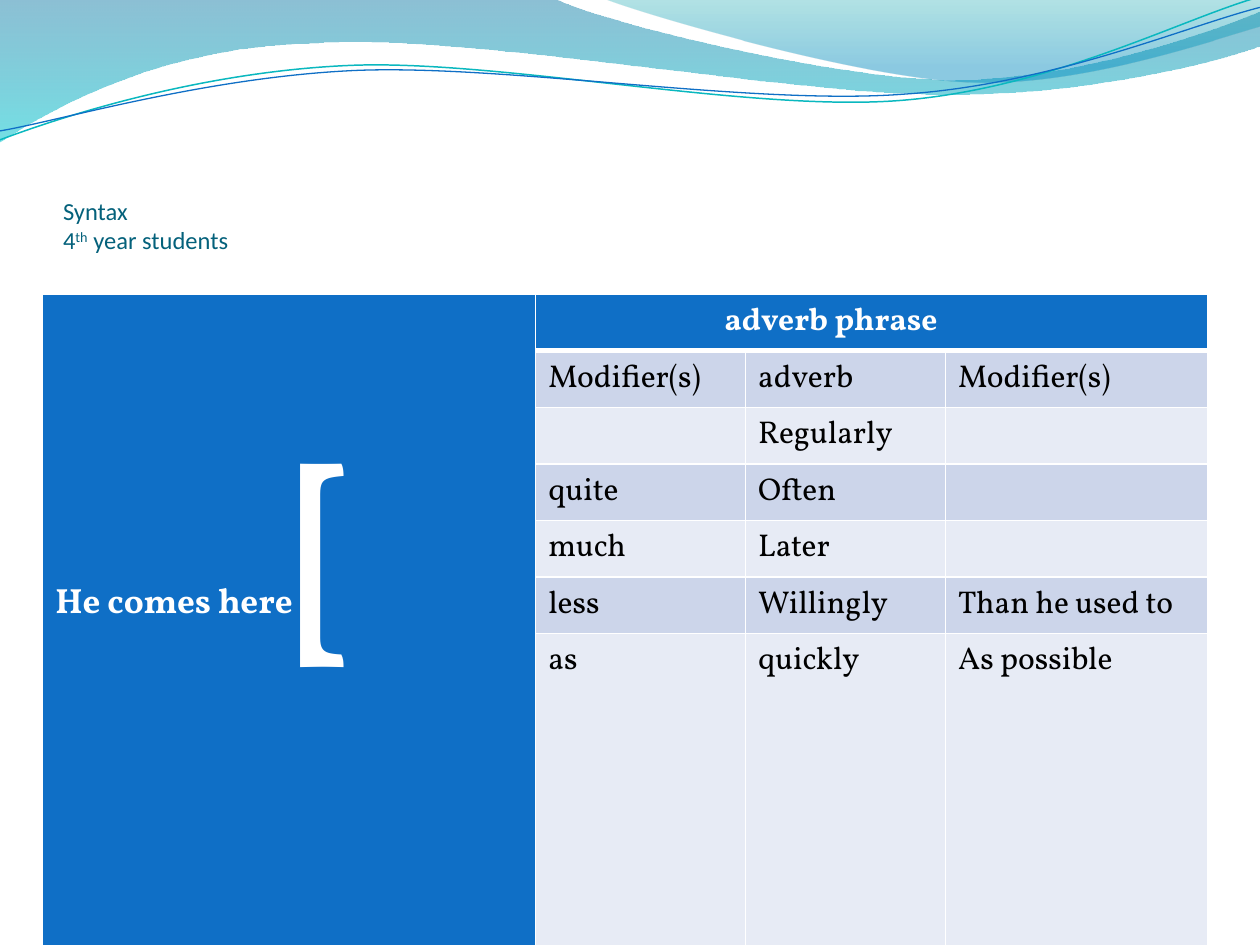
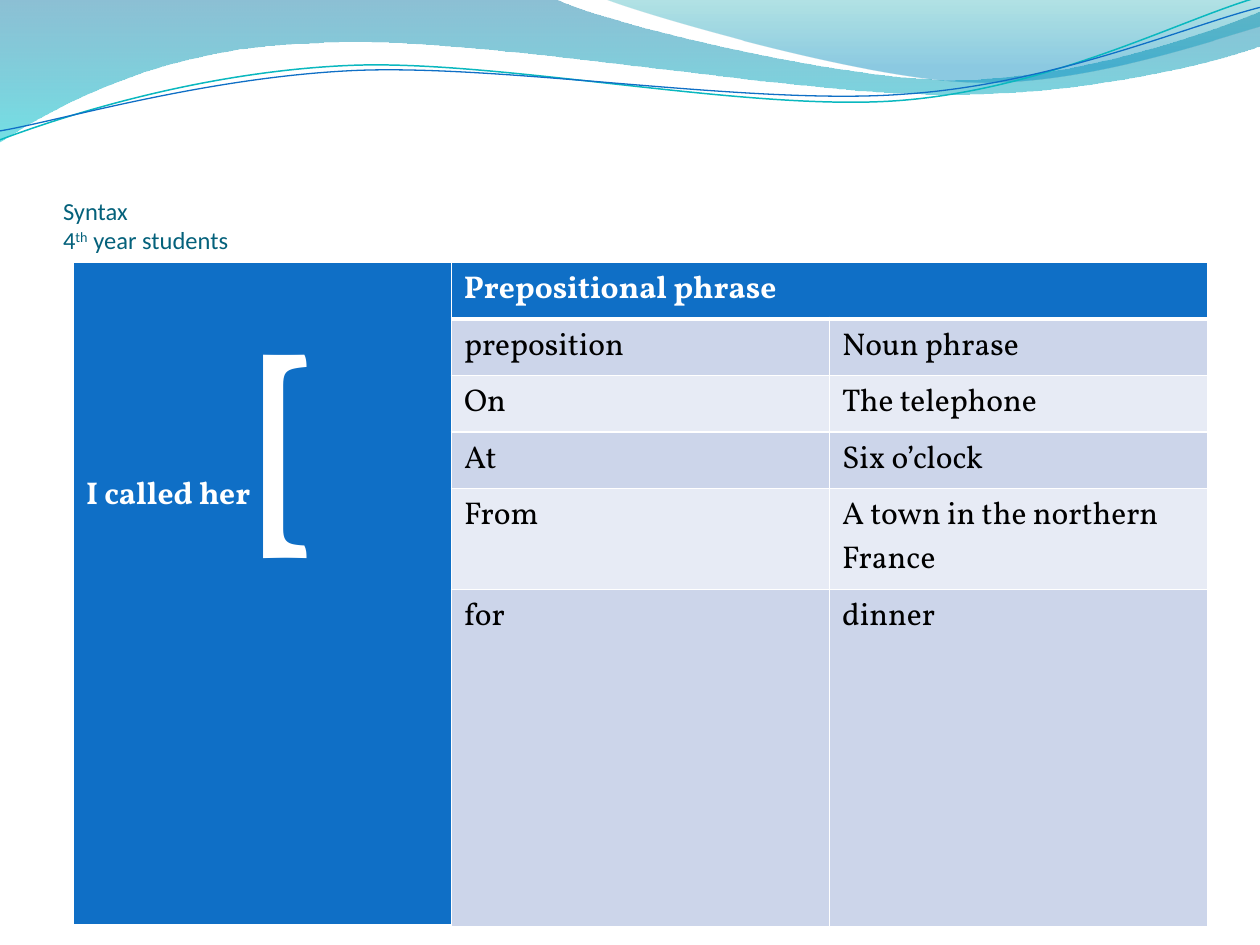
from dataclasses import dataclass

from lxml.etree import SubElement
from pptx import Presentation
from pptx.dml.color import RGBColor as Rgb
from pptx.enum.text import MSO_ANCHOR as Anchor, PP_ALIGN as Align
from pptx.oxml.ns import qn
from pptx.util import Cm, Pt


@dataclass(frozen=True)
class Theme:
    """Colours, fonts and type sizes of the deck."""
    head: str = "0F6FC6"
    bands: tuple = ("E7EBF5", "CCD5EA")
    white: str = "FFFFFF"
    ink: str = "000000"
    title: str = "04617B"
    teal: str = "0AB8BF"
    sans: str = "Calibri"
    serif: str = "Vollkorn"
    small: int = 14
    text: int = 18
    lead: int = 20
    brace: int = 115


THEME = Theme()

WIDE = [(0, 0), (11.18, -0.03), (12.09, 0.43, 16.87, 1.6, 19.25, 1.6),
        (21.67, 1.6, 24.33, 0.66, 25.4, 0.23), (25.43, 0.91),
        (24.97, 1.12, 22.1, 1.93, 18.95, 1.9), (15.8, 1.9, 9.7, 0.71, 6.53, 0.86),
        (3.28, 0.91, 1.17, 2.11, -0.03, 2.87), (0, 0)]
CORNER = [(12.17, -0.03), (12.93, 0.28, 17.32, 1.57, 19.53, 1.65),
          (21.74, 1.75, 24.41, 0.81, 25.4, 0.53), (25.4, 0), (12.17, -0.03)]
UPPER = [(0, 2.82), (1.22, 2.36, 4.01, 1.45, 7.04, 1.32),
         (10.03, 1.19, 15.06, 2.26, 18.11, 2.03),
         (21.16, 1.8, 23.83, 0.38, 25.35, -0.05)]
LOWER = [(0, 2.64), (1.19, 2.44, 4.17, 1.55, 7.19, 1.42),
         (10.24, 1.3, 15.16, 2.13, 18.21, 1.9),
         (21.23, 1.7, 23.9, 0.53, 25.4, 0.15)]
FILLS = [(WIDE, [(0, "0074A1", 45), (1, "00C6CF", 55)]),
         (CORNER, [(0, "00A1A9", 30), (0.8, "008BBF", 45)])]
LINES = [(UPPER, THEME.teal, 0.85), (LOWER, THEME.head, 0.75)]

ADVERB = dict(
    box=(0.86, 5.93), cols=[9.94, 4.23, 4.03, 5.28], rows=[1.14] * 6 + [6.28],
    lead="He comes here", size=THEME.lead, drop=2.57,
    head="adverb phrase", inset=3.81,
    body=[("Modifier(s)", "adverb", "Modifier(s)"), ("", "Regularly", ""),
          ("quite", "Often", ""), ("much", "Later", ""),
          ("less", "Willingly", "Than he used to"),
          ("as", "quickly", "As possible")])
PREP = dict(
    box=(1.48, 5.29), cols=[7.62] * 3, rows=[1.14] * 4 + [2.03, 6.76],
    lead="I called her ", size=THEME.text, drop=1.02,
    head="Prepositional phrase", inset=0.25,
    body=[("preposition", "Noun phrase"), ("On", "The telephone"),
          ("At", "Six o’clock"), ("From", "A town in the northern France"),
          ("for", "dinner")])


def paint(font, name, size, tone, bold=False):
    """Set the look of a font."""
    font.name, font.size, font.bold = name, Pt(size), bold
    font.color.rgb = Rgb.from_string(tone)


def outline(slide, path, box, close):
    """Draw a path of lines and cubic curves from the corner of a box."""
    ends = [(Cm(box[0] + part[-2]), Cm(box[1] + part[-1])) for part in path]
    pen = slide.shapes.build_freeform(*ends[0])
    pen.add_line_segments(ends[1:], close=close)
    shape = pen.convert_to_shape()
    shape.shadow.inherit = False
    nodes = list(shape._element.spPr.iter(qn("a:lnTo")))
    for node, part in zip(nodes, path[1:]):
        if len(part) == 2:
            continue
        curve = node.makeelement(qn("a:cubicBezTo"))
        for x, y in zip(part[::2], part[1::2]):
            SubElement(curve, qn("a:pt"),
                       x=str(Cm(box[0] + x) - shape.left),
                       y=str(Cm(box[1] + y) - shape.top))
        node.getparent().replace(node, curve)
    return shape


def add_waves(slide, box):
    """Draw the waves and move them to the master behind the slides."""
    shapes = []
    for path, stops in FILLS:
        shape = outline(slide, path, box, True)
        shape.fill.gradient()
        shape.fill.gradient_angle = 270
        for stop, (place, tone, _) in zip(shape.fill.gradient_stops, stops):
            stop.position = place
            stop.color.rgb = Rgb.from_string(tone)
        tones = shape._element.spPr.iter(qn("a:srgbClr"))
        for node, stop in zip(list(tones), stops):
            SubElement(node, qn("a:alpha"), val=str(stop[2] * 1000))
        shape.line.fill.background()
        shapes.append(shape)
    for path, tone, width in LINES:
        shape = outline(slide, path, box, False)
        shape.fill.background()
        shape.line.color.rgb = Rgb.from_string(tone)
        shape.line.width = Pt(width)
        shapes.append(shape)
    tree = slide.slide_layout.slide_master.shapes._spTree
    for count, shape in enumerate(shapes):
        shape._element.nvSpPr.cNvPr.set("id", str(100 + count))
        tree.append(shape._element)


def add_title(slide, box):
    """Fill the title with the course and the year."""
    title = slide.shapes.title
    title.left, title.top, title.width, title.height = map(Cm, box)
    frame = title.text_frame
    frame.word_wrap = True
    frame.vertical_anchor = Anchor.BOTTOM
    frame.margin_left = frame.margin_right = frame.margin_bottom = 0
    frame.margin_top = Cm(0.13)
    para = frame.paragraphs[0]
    para.alignment = Align.LEFT
    paint(para.font, THEME.sans, THEME.small, THEME.title)
    para.add_run().text = "Syntax"
    para.add_line_break()
    para.add_run().text = "4"
    power = para.add_run()
    power.text = "th"
    power._r.get_or_add_rPr().set("baseline", "30000")
    para.add_run().text = " year students"


def edge(cell, base):
    """Give a cell white borders, with its own width at the base."""
    props = cell._tc.get_or_add_tcPr()
    for side, width in zip("LRTB", (1, 1, 1, base)):
        line = SubElement(props, qn("a:ln" + side), w=str(Pt(width)))
        fill = SubElement(line, qn("a:solidFill"))
        SubElement(fill, qn("a:srgbClr"), val=THEME.white)


def add_grid(slide, box, cols, rows, lead, size, drop, head, inset, body):
    """Add a phrase table with a lead cell and a spanning head."""
    frame = slide.shapes.add_table(len(rows), len(cols), *map(Cm, box),
                                   Cm(sum(cols)), Cm(sum(rows)))
    table = frame.table
    table.first_col = True
    for col, width in zip(table.columns, cols):
        col.width = Cm(width)
    for row, height in zip(table.rows, rows):
        row.height = Cm(height)
    blanks = [""] * (len(cols) - 2)
    texts = [("", head, *blanks)] + [("", *line) for line in body]
    for r, line in enumerate(texts):
        for c, text in enumerate(line):
            cell = table.cell(r, c)
            top = r == 0 or c == 0
            edge(cell, 1 if r else 3)
            cell.fill.solid()
            cell.fill.fore_color.rgb = Rgb.from_string(
                THEME.head if top else THEME.bands[r % 2])
            para = cell.text_frame.paragraphs[0]
            if text:
                para.add_run().text = text
            paint(para.font, THEME.serif, THEME.text,
                  THEME.white if top else THEME.ink, top)
    table.cell(0, 0).merge(table.cell(len(rows) - 1, 0))
    table.cell(0, 1).merge(table.cell(0, len(cols) - 1))
    table.cell(0, 1).margin_left = Cm(inset)
    first = table.cell(0, 0)
    first.margin_top = Cm(drop)
    para = first.text_frame.paragraphs[0]
    for text, points in ((lead, size), ("[", THEME.brace)):
        run = para.add_run()
        run.text = text
        run.font.size = Pt(points)


def main():
    """Build and save the deck."""
    deck = Presentation()
    deck.slide_width, deck.slide_height = Cm(25.4), Cm(19.05)
    layout = deck.slide_layouts[5]
    for count, grid in enumerate((ADVERB, PREP)):
        slide = deck.slides.add_slide(layout)
        if count == 0:
            add_waves(slide, (0, 0))
        add_title(slide, (1.27, 1.95, 22.86, 3.18))
        add_grid(slide, **grid)
    deck.save("out.pptx")


if __name__ == "__main__":
    main()
